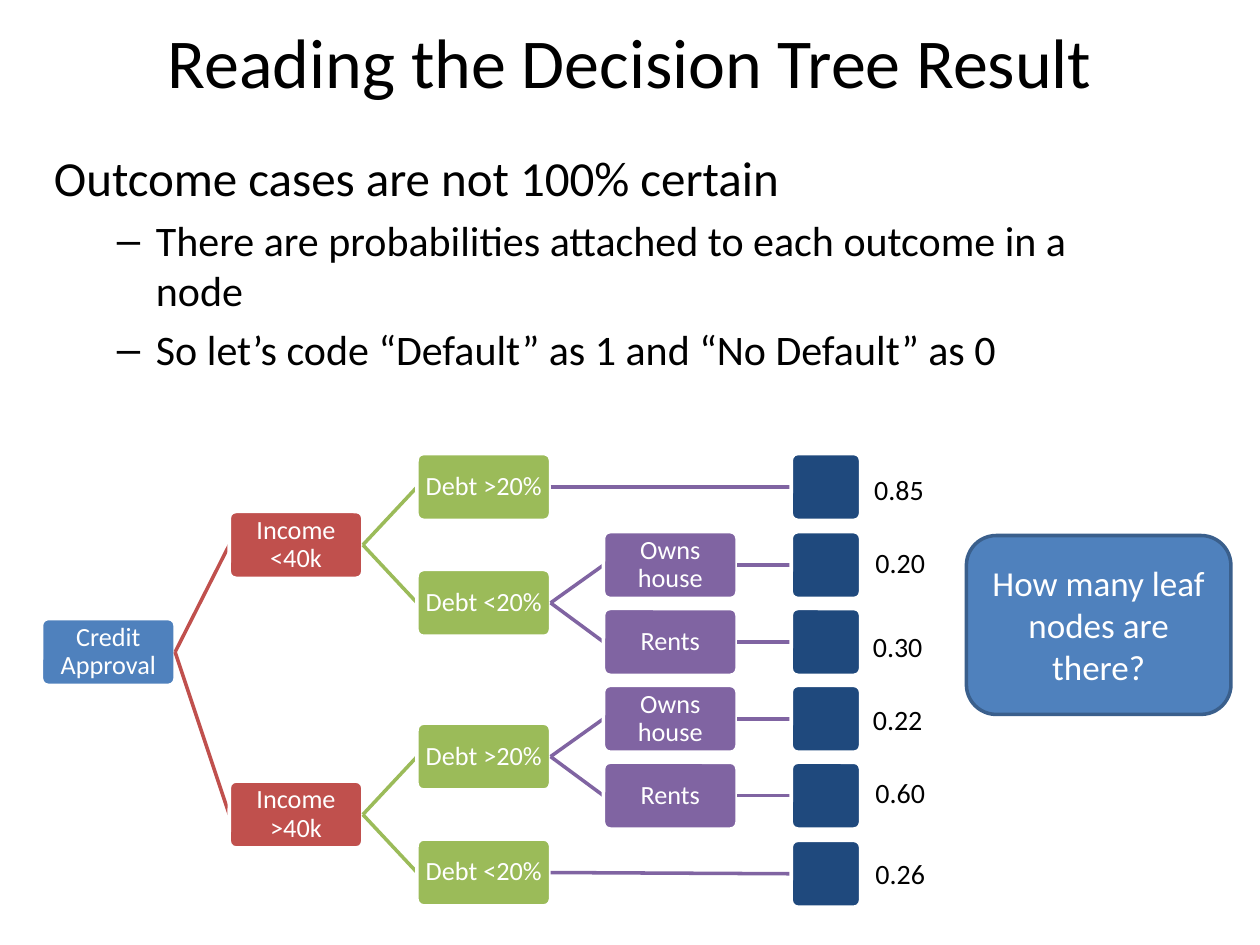
from collections import namedtuple

from lxml import etree
from pptx import Presentation
from pptx.dml.color import RGBColor
from pptx.enum.shapes import MSO_CONNECTOR, MSO_SHAPE
from pptx.enum.text import MSO_ANCHOR, PP_ALIGN
from pptx.oxml.ns import qn
from pptx.util import Inches, Pt

ROUNDED = MSO_SHAPE.ROUNDED_RECTANGLE
STRAIGHT = MSO_CONNECTOR.STRAIGHT
MIDDLE, TOP = MSO_ANCHOR.MIDDLE, MSO_ANCHOR.TOP
CENTER, LEFT = PP_ALIGN.CENTER, PP_ALIGN.LEFT

FONT = "Calibri"
BLACK = RGBColor(0x00, 0x00, 0x00)
WHITE = RGBColor(0xFF, 0xFF, 0xFF)
BLUE = RGBColor(0x4F, 0x81, 0xBD)
DARK_BLUE = RGBColor(0x3A, 0x5F, 0x8C)
NAVY = RGBColor(0x1F, 0x49, 0x7D)
RED = RGBColor(0xC0, 0x50, 0x4D)
GREEN = RGBColor(0x9B, 0xBB, 0x59)
PURPLE = RGBColor(0x80, 0x64, 0xA2)

# Tree geometry in inches: one column per level, leaves in the last column
COLUMN_LEFTS = [0.33, 1.82, 3.31, 4.79]
COLUMN_COLORS = [BLUE, RED, GREEN, PURPLE]
LEAF_LEFT, LEAF_WIDTH = 6.28, 0.55
NODE_WIDTH, NODE_HEIGHT = 1.06, 0.53

Node = namedtuple("Node", "label top children")
Leaf = namedtuple("Leaf", "probability top value_left value_top")

TREE = Node("Credit\nApproval", 4.91, [
    Node("Income <40k", 4.06, [
        Node("Debt >20%", 3.6, [Leaf("0.85", 3.6, 6.84, 3.7)]),
        Node("Debt <20%", 4.52, [
            Node("Owns house", 4.22, [Leaf("0.20", 4.22, 6.85, 4.28)]),
            Node("Rents", 4.83, [Leaf("0.30", 4.83, 6.83, 4.95)]),
        ]),
    ]),
    Node("Income >40k", 6.2, [
        Node("Debt >20%", 5.74, [
            Node("Owns house", 5.44, [Leaf("0.22", 5.44, 6.83, 5.53)]),
            Node("Rents", 6.05, [Leaf("0.60", 6.05, 6.85, 6.11)]),
        ]),
        Node("Debt <20%", 6.66, [Leaf("0.26", 6.67, 6.85, 6.75)]),
    ]),
])


def write_paragraph(paragraph, text, size, color, alignment=LEFT):
    paragraph.alignment = alignment
    for index, line in enumerate(text.split("\n")):
        if index:
            paragraph.add_line_break()
        run = paragraph.add_run()
        run.text = line
        run.font.name = FONT
        run.font.size = Pt(size)
        run.font.color.rgb = color


def set_dash_bullet(paragraph):
    properties = paragraph._p.get_or_add_pPr()
    properties.set("marL", str(Inches(0.81)))
    properties.set("indent", str(Inches(-0.31)))
    bullet_font = etree.SubElement(properties, qn("a:buFont"))
    bullet_font.set("typeface", "Arial")
    bullet = etree.SubElement(properties, qn("a:buChar"))
    bullet.set("char", "–")


def add_text_frame(slide, left, top, width, height, anchor=TOP, wrap=True):
    box = slide.shapes.add_textbox(
        Inches(left), Inches(top), Inches(width), Inches(height))
    frame = box.text_frame
    frame.word_wrap = wrap
    frame.vertical_anchor = anchor
    return frame


def add_rounded_box(slide, left, top, width, height, fill, line):
    shape = slide.shapes.add_shape(
        ROUNDED, Inches(left), Inches(top), Inches(width), Inches(height))
    shape.shadow.inherit = False
    shape.fill.solid()
    shape.fill.fore_color.rgb = fill
    shape.line.color.rgb = line
    shape.line.width = Pt(2)
    shape.text_frame.word_wrap = True
    shape.text_frame.vertical_anchor = MIDDLE
    return shape


def add_branch(slide, start, end, color):
    connector = slide.shapes.add_connector(
        STRAIGHT, *(Inches(value) for value in start + end))
    connector.line.color.rgb = color
    connector.line.width = Pt(2)
    etree.SubElement(connector._element.spPr, qn("a:effectLst"))


def add_tree_box(slide, left, top, width, color):
    shape = add_rounded_box(slide, left, top, width, NODE_HEIGHT, color, WHITE)
    shape.adjustments[0] = 0.1
    return shape


def add_leaf(slide, leaf):
    add_tree_box(slide, LEAF_LEFT, leaf.top, LEAF_WIDTH, NAVY)
    frame = add_text_frame(
        slide, leaf.value_left, leaf.value_top, 0.6, 0.37, wrap=False)
    write_paragraph(frame.paragraphs[0], leaf.probability, 16, BLACK)


def add_node(slide, node, level=0):
    left = COLUMN_LEFTS[level]
    shape = add_tree_box(
        slide, left, node.top, NODE_WIDTH, COLUMN_COLORS[level])
    frame = shape.text_frame
    frame.margin_left = frame.margin_right = Inches(0.03)
    frame.margin_top = frame.margin_bottom = Inches(0.03)
    paragraph = frame.paragraphs[0]
    paragraph.line_spacing = 0.9
    write_paragraph(paragraph, node.label, 15, WHITE, CENTER)

    # Each branch goes in before its child so the child's outline covers its end
    start = (left + NODE_WIDTH, node.top + NODE_HEIGHT / 2)
    for child in node.children:
        child_middle = child.top + NODE_HEIGHT / 2
        if isinstance(child, Leaf):
            add_branch(slide, start, (LEAF_LEFT, child_middle), PURPLE)
            add_leaf(slide, child)
        else:
            end = (COLUMN_LEFTS[level + 1], child_middle)
            add_branch(slide, start, end, COLUMN_COLORS[level + 1])
            add_node(slide, child, level + 1)


def add_title(slide):
    frame = add_text_frame(slide, 0.5, -0.08, 9, 1.12, MIDDLE)
    write_paragraph(frame.paragraphs[0], "Reading the Decision Tree Result",
                    40, BLACK, CENTER)


def add_body(slide):
    frame = add_text_frame(slide, 0.33, 1.12, 9, 2.38)
    heading = frame.paragraphs[0]
    heading.space_before = Pt(5.6)
    write_paragraph(heading, "Outcome cases are not 100% certain", 28, BLACK)
    for text in (
        "There are probabilities attached to each outcome in a node",
        "So let’s code “Default” as 1 and “No Default” as 0",
    ):
        paragraph = frame.add_paragraph()
        paragraph.level = 1
        paragraph.space_before = Pt(4.8)
        set_dash_bullet(paragraph)
        write_paragraph(paragraph, text, 24, BLACK)


def add_question(slide):
    shape = add_rounded_box(slide, 7.67, 4.25, 2.1, 1.42, BLUE, DARK_BLUE)
    write_paragraph(shape.text_frame.paragraphs[0],
                    "How many leaf nodes are there?", 20, WHITE, CENTER)


def main():
    presentation = Presentation()
    presentation.slide_width = Inches(10)
    presentation.slide_height = Inches(7.5)
    slide = presentation.slides.add_slide(presentation.slide_layouts[6])

    add_title(slide)
    add_body(slide)
    add_question(slide)
    add_node(slide, TREE)

    presentation.save("out.pptx")


if __name__ == "__main__":
    main()
